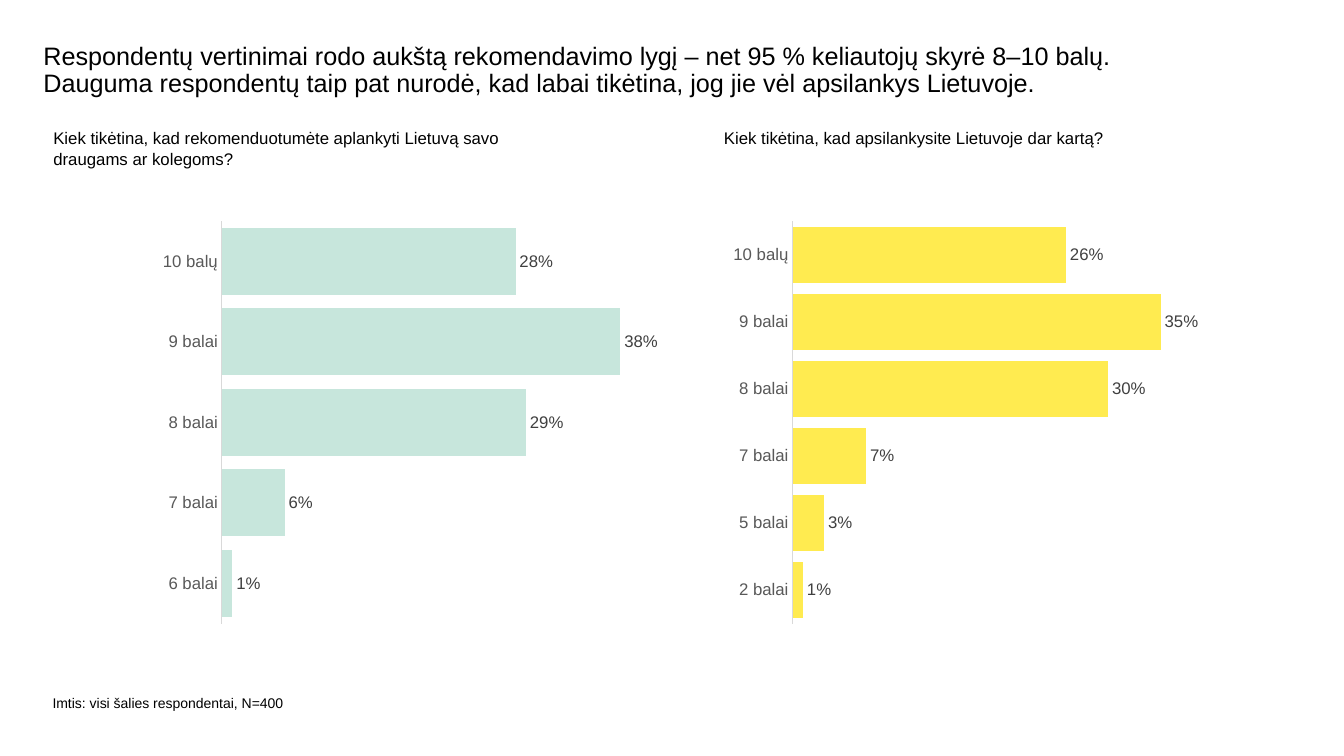
from lxml import etree
from pptx import Presentation
from pptx import util as u
from pptx.chart.data import CategoryChartData
from pptx.dml.color import RGBColor
from pptx.enum import chart as ch
from pptx.enum import text as t
from pptx.oxml import ns

FONT = "Arial"
PLOT_AREA = {"x": 0.135, "y": 0.02, "w": 0.835, "h": 0.96}
SCORES_TOP, SCORES_WIDTH, SCORES_HEIGHT = 152, 360, 299.5


def colour(hex_code):
    """Turn a hex string into a colour."""
    return RGBColor.from_string(hex_code)


def style_font(font, size, hex_code):
    """Set typeface, size and colour of a font."""
    font.name, font.size = FONT, u.Pt(size)
    font.color.rgb = colour(hex_code)


def write(box, content, size=12, inset=(0, 0), spacing=None, anchor=t.MSO_ANCHOR.TOP):
    """Fill a box with one left-aligned paragraph of formatted text."""
    frame = box.text_frame
    frame.word_wrap = True
    frame.auto_size = t.MSO_AUTO_SIZE.NONE
    frame.vertical_anchor = anchor
    frame.margin_left = frame.margin_right = u.Pt(inset[0])
    frame.margin_top = frame.margin_bottom = u.Pt(inset[1])
    para = frame.paragraphs[0]
    para.alignment = t.PP_ALIGN.LEFT
    para.line_spacing = spacing
    span = para.add_run()
    span.text = content
    style_font(span.font, size, "000000")


def add_title(page, content):
    """Place and fill the title placeholder."""
    title = page.shapes.title
    title.left, title.top = u.Pt(31), u.Pt(28.8)
    title.width, title.height = u.Pt(810), u.Pt(43.2)
    write(title, content, size=18, spacing=0.9, anchor=t.MSO_ANCHOR.MIDDLE)


def add_text(page, content, left, top, width, height, **style):
    """Add a text box at a position in points."""
    box = page.shapes.add_textbox(u.Pt(left), u.Pt(top), u.Pt(width), u.Pt(height))
    write(box, content, **style)


def fix_plot_area(chart):
    """Pin the inner plot area to fixed fractions of the chart."""
    plot_area = chart.plots[0]._element.getparent()
    layout = plot_area.find(ns.qn("c:layout"))
    if layout is None:
        layout = etree.Element(ns.qn("c:layout"))
        plot_area.insert(0, layout)
    manual = etree.SubElement(layout, ns.qn("c:manualLayout"))
    settings = {"layoutTarget": "inner", "xMode": "edge", "yMode": "edge", **PLOT_AREA}
    for tag, value in settings.items():
        etree.SubElement(manual, ns.qn(f"c:{tag}")).set("val", str(value))


def add_scores(page, left, scores, bar_colour):
    """Add a bar chart of the share of respondents per score."""
    data = CategoryChartData(number_format="0%")
    data.categories = list(scores)
    data.add_series("Series 1", list(scores.values()))
    chart = page.shapes.add_chart(
        ch.XL_CHART_TYPE.BAR_CLUSTERED, u.Pt(left), u.Pt(SCORES_TOP),
        u.Pt(SCORES_WIDTH), u.Pt(SCORES_HEIGHT), data).chart
    chart.has_legend = chart.has_title = False
    style_font(chart.font, 10, "000000")
    fix_plot_area(chart)

    axis = chart.category_axis
    axis.reverse_order = True
    axis.major_tick_mark = axis.minor_tick_mark = ch.XL_TICK_MARK.NONE
    axis.format.line.color.rgb = colour("D9D9D9")
    axis.format.line.width = u.Pt(0.75)
    style_font(axis.tick_labels.font, 12, "595959")

    values = chart.value_axis
    values.visible = values.has_major_gridlines = False
    values.minimum_scale, values.maximum_scale = 0, 0.4

    plot = chart.plots[0]
    plot.gap_width = 20
    plot.vary_by_categories = False
    fill = plot.series[0].format.fill
    fill.solid()
    fill.fore_color.rgb = colour(bar_colour)
    plot.has_data_labels = True
    labels = plot.data_labels
    labels.show_value = True
    labels.position = ch.XL_LABEL_POSITION.OUTSIDE_END
    labels.number_format, labels.number_format_is_linked = "0%", False
    style_font(labels.font, 12, "404040")


def main():
    """Build and save the slide."""
    deck = Presentation()
    deck.slide_width, deck.slide_height = u.Pt(960), u.Pt(540)
    page = deck.slides.add_slide(deck.slide_layouts.get_by_name("Title Only"))
    add_title(page, "Respondentų vertinimai rodo aukštą rekomendavimo lygį – net 95 % "
                    "keliautojų skyrė 8–10 balų. Dauguma respondentų taip pat nurodė, "
                    "kad labai tikėtina, jog jie vėl apsilankys Lietuvoje.")
    add_text(page, "Imtis: visi šalies respondentai, N=400", 37.5, 496, 278, 32, size=10)
    add_text(page, "Kiek tikėtina, kad rekomenduotumėte aplankyti Lietuvą savo "
                   "draugams ar kolegoms?", 31, 88, 374, 36, inset=(7.2, 3.6))
    add_text(page, "Kiek tikėtina, kad apsilankysite Lietuvoje dar kartą?",
             510, 88, 440, 22, inset=(7.2, 3.6))
    add_scores(page, 110, {"10 balų": 0.28, "9 balai": 0.38, "8 balai": 0.29,
                           "7 balai": 0.06, "6 balai": 0.01}, "C7E6DC")
    add_scores(page, 517.5, {"10 balų": 0.26, "9 balai": 0.35, "8 balai": 0.30,
                             "7 balai": 0.07, "5 balai": 0.03, "2 balai": 0.01}, "FFEB50")
    deck.save("out.pptx")


if __name__ == "__main__":
    main()
